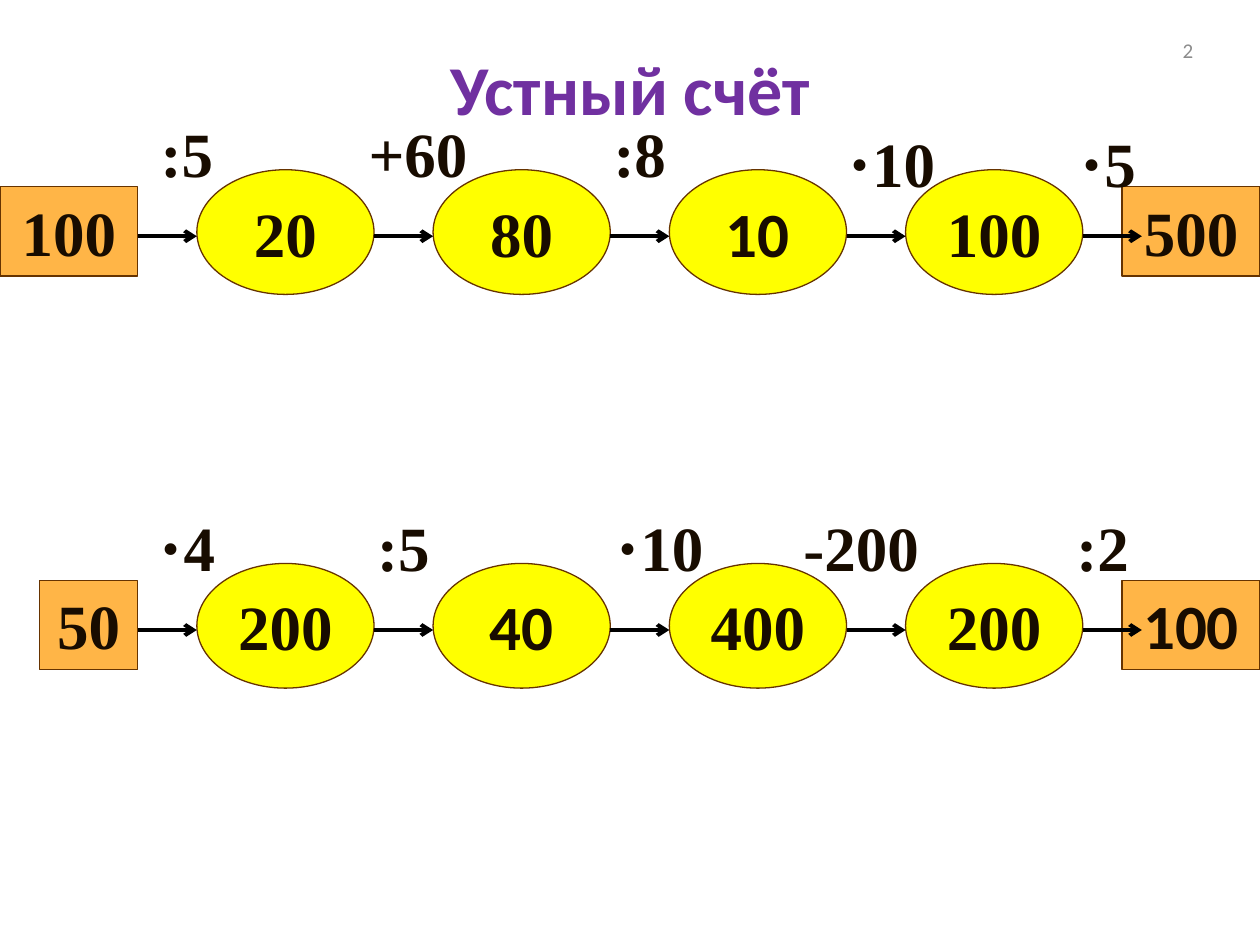
from lxml.etree import SubElement
from pptx import Presentation
from pptx.dml.color import RGBColor as RGB
from pptx.enum.shapes import MSO_CONNECTOR as LINE, MSO_SHAPE as SHAPE
from pptx.enum.text import MSO_ANCHOR as ANCHOR, MSO_AUTO_SIZE as FIT, PP_ALIGN as ALIGN
from pptx.oxml.ns import qn
from pptx.util import Pt

HUE = {"box": "FFB547", "oval": "FFFF00", "edge": "663300", "ink": "180C00",
       "arrow": "000000", "title": "7030A0", "page": "8C8C8C"}
SERIF, SANS = "Times New Roman", "Calibri"

# mid: height of the arrows; ends: text, font, left, width;
# ovals: text, font; steps: text, left, width, drop
CHAINS = [
    {"mid": 135,
     "ends": [("100", SERIF, 0, 78.75), ("500", SERIF, 641.25, 78.75)],
     "ovals": [("20", SERIF), ("80", SERIF), ("10", SANS), ("100", SERIF)],
     "steps": [(":5", 78.75, 56.25, 0), ("+60", 196.75, 84.25, 0),
               (":8", 337.5, 56.25, 0), ("⋅10", 472.5, 73.5, 5.75),
               ("⋅5", 596.25, 73.5, 5.75)]},
    {"mid": 360,
     "ends": [("50", SERIF, 22.5, 56.25), ("100", SANS, 641.25, 78.75)],
     "ovals": [("200", SERIF), ("40", SANS), ("400", SERIF), ("200", SERIF)],
     "steps": [("⋅4", 78.75, 56.25, 0), (":5", 196.75, 67.5, 0),
               ("⋅10", 337.5, 78.75, 0), ("-200", 450, 84.25, 0),
               (":2", 602, 56.25, 0)]},
]
PITCH, START, GAP = 135, 78.75, 33.75
OVAL_W, OVAL_H, BOX_H = PITCH - GAP, 71.25, 51

deck = Presentation()
deck.slide_width, deck.slide_height = Pt(720), Pt(540)
slide = deck.slides.add_slide(deck.slide_layouts[6])
shapes = slide.shapes


def write(shape, text, font=SERIF, size=36, hue="ink", bold=True,
          align=ALIGN.CENTER, anchor=ANCHOR.TOP, fit=FIT.SHAPE_TO_FIT_TEXT):
    frame = shape.text_frame
    frame.word_wrap = True
    frame.auto_size = fit
    frame.vertical_anchor = anchor
    para = frame.paragraphs[0]
    para.alignment = align
    run = para.add_run()
    run.text = text
    run.font.name, run.font.size, run.font.bold = font, Pt(size), bold
    run.font.color.rgb = RGB.from_string(HUE[hue])


def label(text, x, y, w, h, **style):
    write(shapes.add_textbox(Pt(x), Pt(y), Pt(w), Pt(h)), text, **style)


def node(kind, hue, text, font, x, y, w, h):
    shape = shapes.add_shape(kind, Pt(x), Pt(y), Pt(w), Pt(h))
    shape.shadow.inherit = False
    shape.fill.solid()
    shape.fill.fore_color.rgb = RGB.from_string(HUE[hue])
    shape.line.color.rgb = RGB.from_string(HUE["edge"])
    shape.line.width = Pt(0.75)
    write(shape, text, font)


def arrow(x, y):
    link = shapes.add_connector(LINE.STRAIGHT, Pt(x), Pt(y), Pt(x + GAP), Pt(y))
    link.line.color.rgb = RGB.from_string(HUE["arrow"])
    link.line.width = Pt(2.25)
    SubElement(link.line._get_or_add_ln(), qn("a:tailEnd"), type="arrow")
    SubElement(link._element.spPr, qn("a:effectLst"))


for chain in CHAINS:
    mid = chain["mid"]
    for text, font, x, w in chain["ends"]:
        node(SHAPE.RECTANGLE, "box", text, font, x, mid - 28.25, w, BOX_H)
    for i, (text, font) in enumerate(chain["ovals"]):
        node(SHAPE.OVAL, "oval", text, font,
             START + GAP + i * PITCH, mid - 38, OVAL_W, OVAL_H)
    for i, (text, x, w, drop) in enumerate(chain["steps"]):
        label(text, x, mid - 73.25 + drop, w, BOX_H)
        arrow(START + i * PITCH, mid)

label("2", 641.25, 14.5, 47.75, 28.75, font=SANS, size=12, hue="page",
      bold=False, align=ALIGN.RIGHT, anchor=ANCHOR.MIDDLE, fit=FIT.NONE)
label("Устный счёт", 112.5, 22.5, 495, 55.5, font=SANS, size=40, hue="title")

deck.save("out.pptx")
